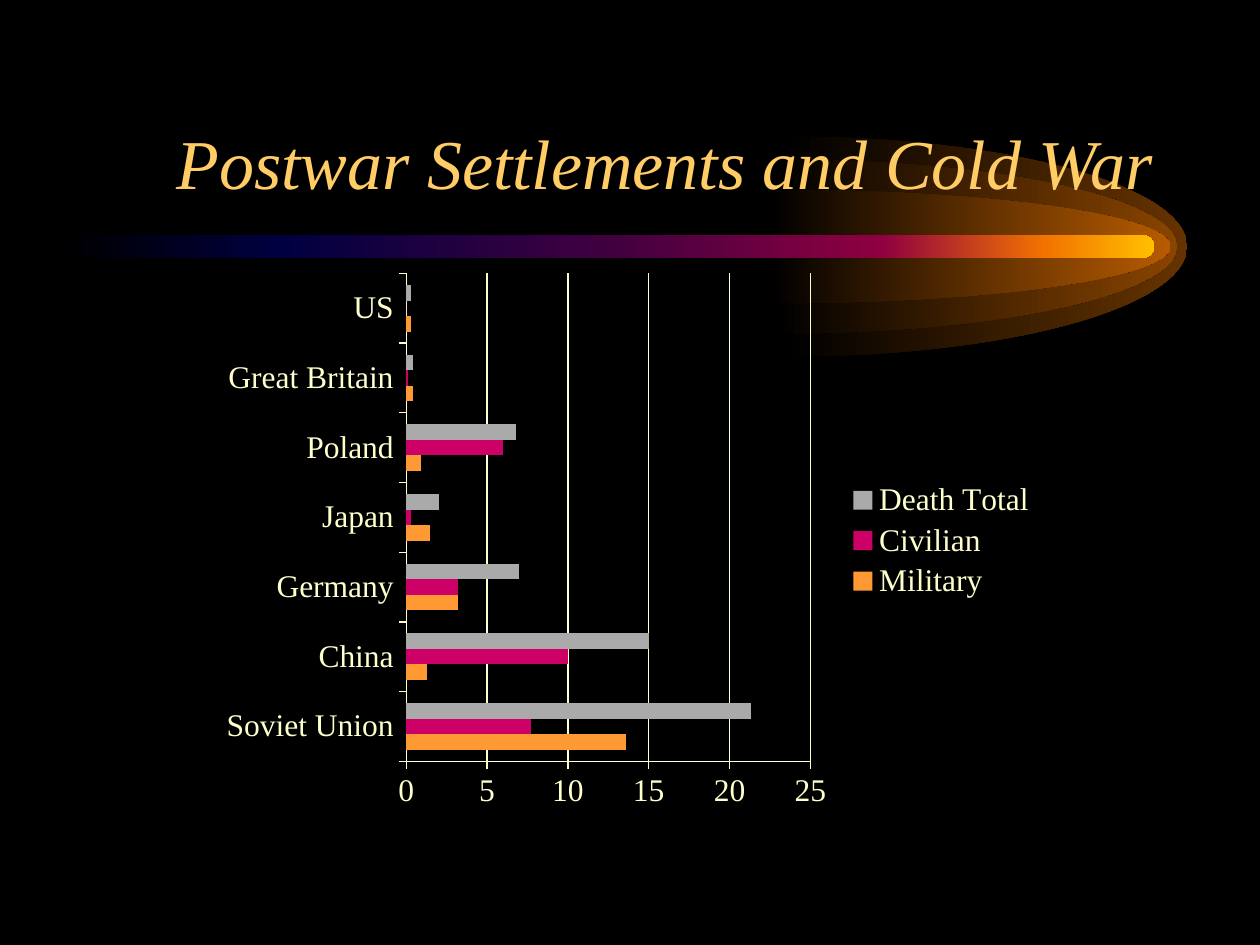
import pptx
import pptx.chart.data
import pptx.dml.color
import pptx.enum.chart
import pptx.enum.shapes
import pptx.enum.text
import pptx.oxml
import pptx.oxml.ns
import pptx.util
from pptx.util import Cm, Pt

FONT = "Times New Roman"
COLORS = {
    "background": "000000", "title": "FFCC66", "text": "FFFFCC",
    "outer": "663300", "middle": "894400", "inner": "B75B00",
    "Military": "FF9933", "Civilian": "CC0066", "Death Total": "AAAAAA",
}
BAR_STOPS = [(0, "000000"), (20, "000040"), (50, "400040"),
             (75, "8F0040"), (90, "F27300"), (100, "FFBF00")]
COMET_Y = 4.97
# left edge, half height, colour
GLOWS = [(15.85, 2.22, "outer"), (15.65, 1.76, "middle"), (15.52, 1.15, "inner")]
GLOW_LENGTH = 8.08
ARC = 0.55  # Bezier handle length for a quarter ellipse

COUNTRIES = ["Soviet Union", "China", "Germany", "Japan", "Poland",
             "Great Britain", "US"]
DEATHS = {
    "Military": [13.6, 1.3, 3.2, 1.5, 0.9, 0.4, 0.3],
    "Civilian": [7.7, 10, 3.2, 0.3, 6, 0.1, 0],
    "Death Total": [21.3, 15, 7, 2, 6.8, 0.4, 0.3],
}


def rgb(value):
    return pptx.dml.color.RGBColor.from_string(value)


def set_gradient(sp, stops):
    """Fill left to right with (percent, hex) stops, without line or shadow."""
    sp.shadow.inherit = False
    sp.line.fill.background()
    sp.fill.gradient()
    sp.fill.gradient_angle = 0
    stop_list = sp._element.spPr.find(".//" + pptx.oxml.ns.qn("a:gsLst"))
    for stop in list(stop_list):
        stop_list.remove(stop)
    for percent, color in stops:
        stop_list.append(pptx.oxml.parse_xml(
            f'<a:gs {pptx.oxml.ns.nsdecls("a")} pos="{percent * 1000}">'
            f'<a:srgbClr val="{color}"/></a:gs>'))


def curve_segments(sp, curves):
    """Replace each straight segment with a Bezier curve of three points."""
    segments = sp._element.spPr.findall(".//" + pptx.oxml.ns.qn("a:lnTo"))
    for segment, curve in zip(segments, curves):
        points = "".join(f'<a:pt x="{int(x)}" y="{int(y)}"/>' for x, y in curve)
        segment.getparent().replace(segment, pptx.oxml.parse_xml(
            f'<a:cubicBezTo {pptx.oxml.ns.nsdecls("a")}>{points}</a:cubicBezTo>'))


def add_glow(slide, left, half_height, color):
    """Add the right half of an ellipse, fading in from the background."""
    x, y, w, h = Cm(left), Cm(COMET_Y), Cm(GLOW_LENGTH), Cm(half_height)
    builder = slide.shapes.build_freeform(x, y - h, scale=1.0)
    builder.add_line_segments([(x + w, y), (x, y + h)], close=True)
    sp = builder.convert_to_shape()
    curve_segments(sp, [
        [(w * ARC, 0), (w, h * (1 - ARC)), (w, h)],
        [(w, h * (1 + ARC)), (w * ARC, 2 * h), (0, 2 * h)],
    ])
    set_gradient(sp, [(0, COLORS["background"]), (100, COLORS[color])])


def add_comet_bar(slide):
    height = 0.46
    sp = slide.shapes.add_shape(
        pptx.enum.shapes.MSO_SHAPE.ROUNDED_RECTANGLE,
        Cm(1.27), Cm(COMET_Y - height / 2), Cm(22), Cm(height))
    sp.adjustments[0] = 0.5
    set_gradient(sp, BAR_STOPS)


def format_title(slide, text):
    title = slide.shapes.title
    title.left, title.top = Cm(1.9), Cm(1.06)
    title.width, title.height = Cm(21.6), Cm(3.17)
    tf = title.text_frame
    tf.text = text
    tf.word_wrap = True
    tf.auto_size = pptx.enum.text.MSO_AUTO_SIZE.NONE
    tf.vertical_anchor = pptx.enum.text.MSO_ANCHOR.BOTTOM
    p = tf.paragraphs[0]
    p.alignment = pptx.enum.text.PP_ALIGN.RIGHT
    font = p.runs[0].font
    font.name, font.size, font.italic = FONT, Pt(40), True
    font.color.rgb = rgb(COLORS["title"])
    # Bring the title in front of the comet
    slide.shapes._spTree.append(title._element)


def format_line(line):
    line.color.rgb = rgb(COLORS["text"])
    line.width = Pt(0.75)


def add_deaths_chart(slide):
    data = pptx.chart.data.CategoryChartData()
    data.categories = COUNTRIES
    for name, values in DEATHS.items():
        data.add_series(name, values)
    chart = slide.shapes.add_chart(
        pptx.enum.chart.XL_CHART_TYPE.BAR_CLUSTERED,
        Cm(4.23), Cm(5.29), Cm(16.93), Cm(11.22), data).chart
    chart.has_title = False
    chart.font.name, chart.font.size = FONT, Pt(18)
    chart.font.color.rgb = rgb(COLORS["text"])

    chart.has_legend = True
    chart.legend.position = pptx.enum.chart.XL_LEGEND_POSITION.RIGHT
    chart.legend.include_in_layout = False

    plot = chart.plots[0]
    plot.gap_width, plot.overlap = 150, 0
    plot.vary_by_categories = False
    for series in plot.series:
        series.format.fill.solid()
        series.format.fill.fore_color.rgb = rgb(COLORS[series.name])
        series.invert_if_negative = False

    for axis in (chart.category_axis, chart.value_axis):
        axis.major_tick_mark = pptx.enum.chart.XL_TICK_MARK.OUTSIDE
        axis.minor_tick_mark = pptx.enum.chart.XL_TICK_MARK.NONE
        format_line(axis.format.line)
    axis = chart.value_axis
    axis.has_major_gridlines = True
    format_line(axis.major_gridlines.format.line)


def main():
    prs = pptx.Presentation()
    prs.slide_width, prs.slide_height = Cm(25.4), Cm(19.05)
    slide = prs.slides.add_slide(prs.slide_layouts.get_by_name("Title Only"))
    slide.background.fill.solid()
    slide.background.fill.fore_color.rgb = rgb(COLORS["background"])
    for left, half_height, color in GLOWS:
        add_glow(slide, left, half_height, color)
    add_comet_bar(slide)
    format_title(slide, "Postwar Settlements and Cold War")
    add_deaths_chart(slide)
    prs.save("out.pptx")


if __name__ == "__main__":
    main()
